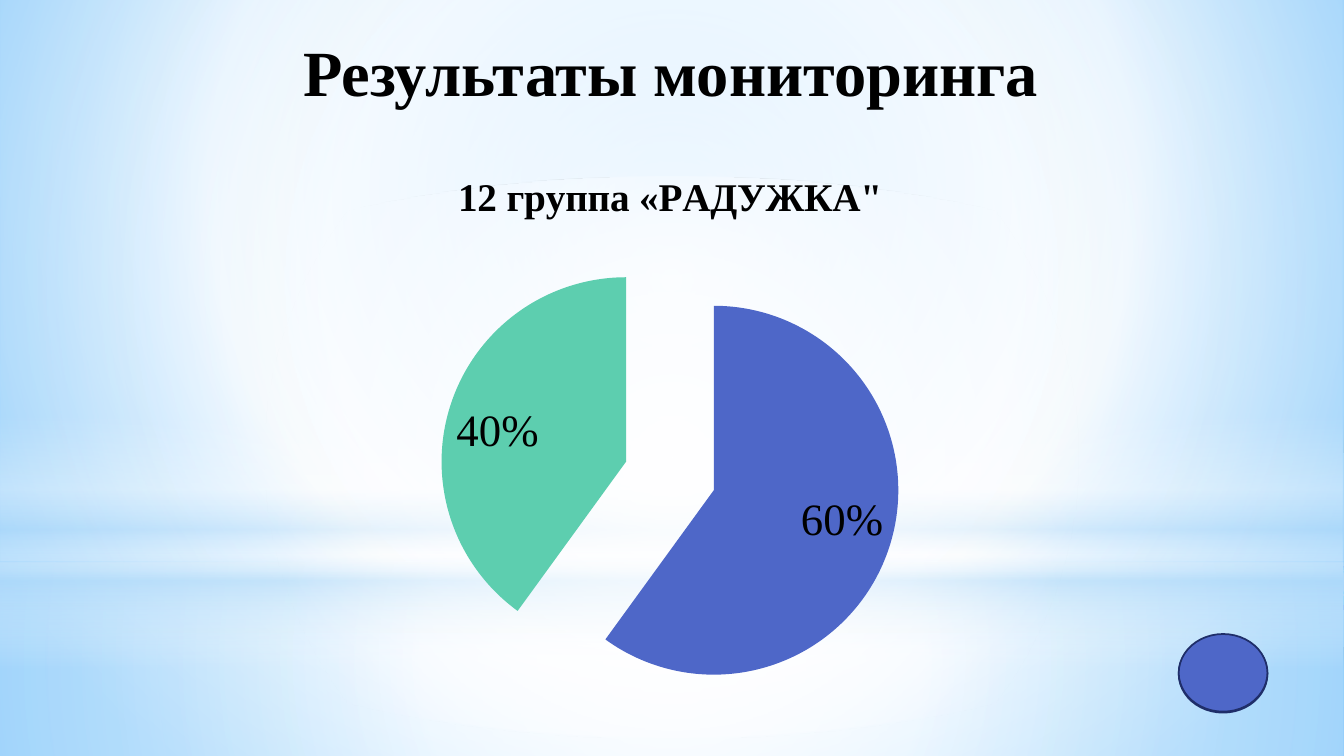
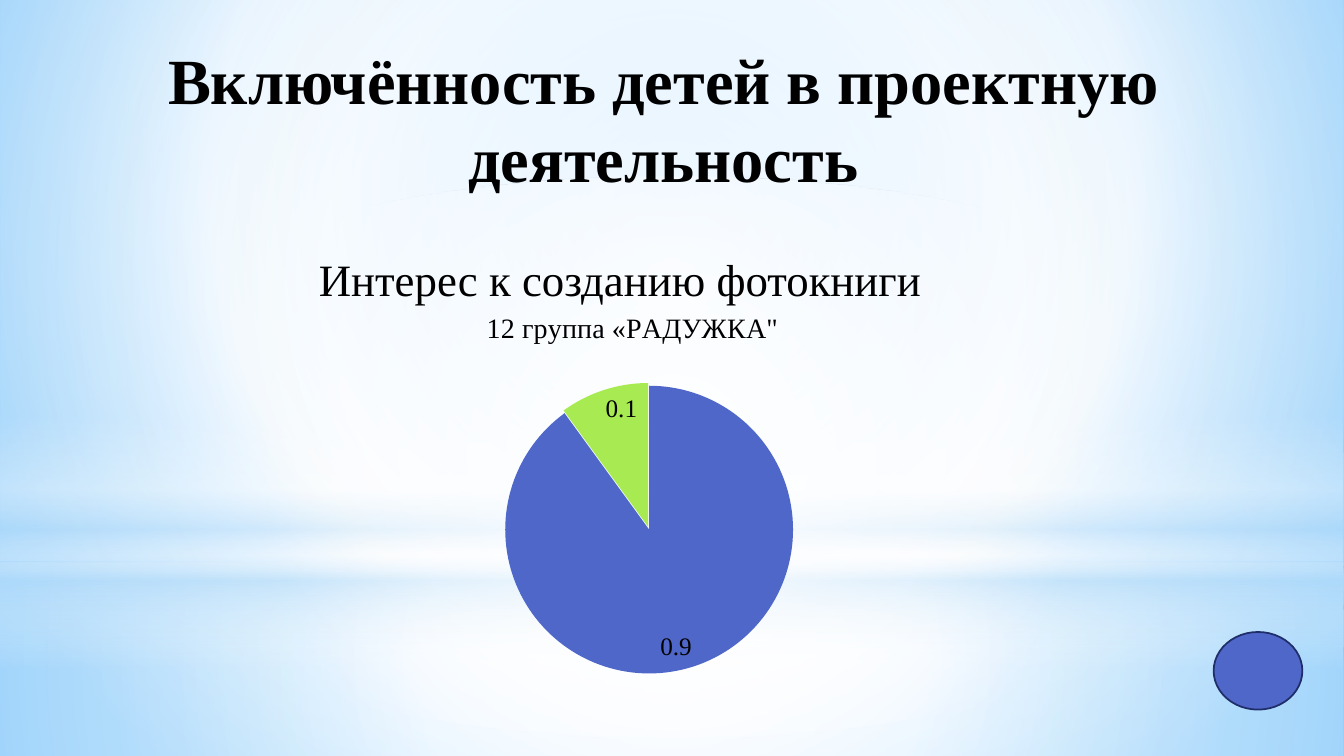
from dataclasses import dataclass

from lxml import etree
from pptx import Presentation
from pptx.chart.data import CategoryChartData
from pptx.dml.color import RGBColor as RGB
from pptx.enum.chart import XL_CHART_TYPE as Chart, XL_LABEL_POSITION as LabelPos
from pptx.enum.shapes import MSO_SHAPE as Shape
from pptx.enum.text import MSO_ANCHOR as Anchor, PP_ALIGN as Align
from pptx.oxml.ns import qn
from pptx.util import Inches, Pt


@dataclass(frozen=True)
class Theme:
    """Colours, fonts and type sizes of the deck."""
    ink: str = "000000"
    blue: str = "4E67C8"
    navy: str = "1F2E69"
    cyan: str = "5ECCF3"
    lime: str = "A7EA52"
    green: str = "5DCEAF"
    white: str = "FFFFFF"
    haze: str = "B4DCFA"
    sky: str = "9ED5FF"
    deep_sky: str = "5BB9FF"
    serif: str = "Times New Roman"
    sans: str = "Roboto"
    title: int = 46
    large: int = 32
    group: int = 28
    small_group: int = 20
    chart: int = 18
    outline: float = 1.25


@dataclass(frozen=True)
class Box:
    """A rectangle in EMU."""
    x: int
    y: int
    w: int
    h: int

    def inner(self, x, y, w, h):
        """Return an inner box given in percent of this one."""
        return Box(self.x + int(self.w * x / 100), self.y + int(self.h * y / 100),
                   int(self.w * w / 100), int(self.h * h / 100))

    @property
    def at(self):
        """Return left, top, width and height."""
        return self.x, self.y, self.w, self.h


T = Theme()
PAGE = Box(0, 0, Inches(13.33), Inches(7.5))
CENTRE = (50, 50, 50, 50)
GROUP = "12 группа «РАДУЖКА\""
BACKDROP = ((0, T.sky, 100), (60, T.white, 100), (100, T.deep_sky, 100))
BANDS = (
    (Shape.RECTANGLE, (0, 74.4, 100, 25.6), CENTRE,
     ((0, T.white, 91), (37, T.white, 76), (100, T.haze, 79))),
    (Shape.RECTANGLE, (0, 0, 100, 74.4), CENTRE,
     ((0, T.white, 89), (48, T.white, 62), (100, T.haze, 79))),
    (Shape.RECTANGLE, (0, 54.93, 100, 33.33), None,
     ((0, T.white, 0), (29, T.white, 30), (45, T.haze, 40),
      (55, T.white, 26), (65, T.haze, 60), (100, T.white, 0))),
    (Shape.OVAL, (0, 23.33, 100, 74.4), CENTRE,
     ((0, T.white, 100), (56, T.white, 0))),
)


def add(parent, tag, **attrs):
    """Append an XML child and return it."""
    return etree.SubElement(parent, qn(tag), {k: str(v) for k, v in attrs.items()})


def gradient(owner, stops, focus):
    """Swap the owner's first solid fill for a radial or vertical gradient."""
    solid = next(owner.iter(qn("a:solidFill")))
    grad = etree.Element(qn("a:gradFill"), rotWithShape="1")
    stop_list = add(grad, "a:gsLst")
    for pos, color, alpha in stops:
        clr = add(add(stop_list, "a:gs", pos=pos * 1000), "a:srgbClr", val=color)
        if alpha < 100:
            add(clr, "a:alpha", val=alpha * 1000)
    if focus:
        edges = {k: v * 1000 for k, v in zip("ltrb", focus)}
        add(add(grad, "a:path", path="circle"), "a:fillToRect", **edges)
    else:
        add(grad, "a:lin", ang=90 * 60000, scaled=0)
    solid.getparent().replace(solid, grad)


def style_font(font, size, name=T.serif, bold=False):
    """Set face, size, weight and ink colour."""
    font.name, font.size, font.bold = name, Pt(size), bold
    font.color.rgb = RGB.from_string(T.ink)


def add_plain(s, kind, box, color):
    """Add a preset shape with a solid fill, no shadow and no line."""
    sp = s.shapes.add_shape(kind, *box.at)
    sp.shadow.inherit = False
    sp.fill.solid()
    sp.fill.fore_color.rgb = RGB.from_string(color)
    sp.line.fill.background()
    return sp


def dress_master(prs, s, box):
    """Give the master its backdrop and light bands."""
    master = prs.slide_master
    master.background.fill.solid()
    master.background.fill.fore_color.rgb = RGB.from_string(T.white)
    gradient(master.element, BACKDROP, (20, 10, 20, 60))
    for i, (kind, place, focus, stops) in enumerate(BANDS):
        sp = add_plain(s, kind, box.inner(*place), T.white)
        gradient(sp.element, stops, focus)
        next(sp.element.iter(qn("p:cNvPr"))).set("id", str(100 + i))
        master.shapes.element.insert(2 + i, sp.element)


def write(tf, text, size, bold=False):
    """Write one centred run at the top of a text frame."""
    tf.word_wrap, tf.vertical_anchor = True, Anchor.TOP
    p = tf.paragraphs[0]
    p.alignment = Align.CENTER
    r = p.add_run()
    r.text = text
    style_font(r.font, size, bold=bold)


def add_title(s, box, text):
    """Place and fill the title placeholder."""
    sp = s.shapes.title
    sp.left, sp.top, sp.width, sp.height = box.at
    write(sp.text_frame, text, T.title, True)
    sp.text_frame.margin_top = Inches(0.1)


def add_heading(s, box, text):
    """Add the line above a chart."""
    write(s.shapes.add_textbox(*box.at).text_frame, text, T.large)


def add_button(s, box):
    """Add a round button."""
    sp = add_plain(s, Shape.OVAL, box, T.blue)
    sp.line.color.rgb = RGB.from_string(T.navy)
    sp.line.width = Pt(T.outline)


def explode(ser, offsets):
    """Pull the slices out, with own offsets for some of them."""
    points = ser.findall(qn("c:dPt"))
    points[0].addprevious(etree.Element(qn("c:explosion"), val="25"))
    for i, offset in offsets.items():
        mark = etree.Element(qn("c:explosion"), val=str(offset))
        points[i].find(qn("c:spPr")).addprevious(mark)


def place_plot(chart, shares):
    """Fix the inner plot area in shares of the chart."""
    area = next(chart.element.iter(qn("c:plotArea")))
    for old in area.findall(qn("c:layout")):
        area.remove(old)
    layout = etree.Element(qn("c:layout"))
    manual = add(layout, "c:manualLayout")
    add(manual, "c:layoutTarget", val="inner")
    for key in "xy":
        add(manual, f"c:{key}Mode", val="edge")
    for key, share in zip("xywh", shares):
        add(manual, f"c:{key}", val=share)
    area.insert(0, layout)


def add_pie(s, box, values, title_size, label_size, bold=False, percent=False,
            offsets=None, plot_at=None):
    """Add an exploded pie with its title and labels."""
    data = CategoryChartData()
    data.categories = [str(i + 1) for i in range(len(values))]
    data.add_series("Series 1", values)
    chart = s.shapes.add_chart(Chart.PIE, *box.at, data).chart
    style_font(chart.font, T.chart, T.sans)
    chart.has_legend = False
    chart.has_title = True
    r = chart.chart_title.text_frame.paragraphs[0].add_run()
    r.text = GROUP
    style_font(r.font, title_size, bold=bold)
    plot = chart.plots[0]
    plot.vary_by_categories = True
    for i, color in zip(range(len(values)), (T.blue, T.cyan, T.lime, T.green)):
        fmt = plot.series[0].points[i].format
        fmt.fill.solid()
        fmt.fill.fore_color.rgb = RGB.from_string(color)
        fmt.line.fill.background()
    plot.has_data_labels = True
    labels = plot.data_labels
    labels.show_percentage, labels.show_value = percent, not percent
    labels.number_format = "0%" if percent else "General"
    labels.number_format_is_linked = False
    labels.position = LabelPos.INSIDE_END
    style_font(labels.font, label_size)
    explode(next(chart.element.iter(qn("c:ser"))), offsets or {})
    if plot_at:
        place_plot(chart, plot_at)


def results_slide(s, box):
    """Fill the slide with the monitoring results."""
    add_title(s, box.inner(4.88, 2.93, 90, 16.67), "Результаты мониторинга")
    add_pie(s, box.inner(3.8, 19.6, 92.1, 75.7), (60, None, None, 40),
            T.group, T.large, bold=True, percent=True)
    for top in (84, 83.87):
        add_button(s, box.inner(87.7, top, 6.6, 10.27))


def interest_slide(s, box):
    """Fill the slide on the children's interest."""
    add_title(s, box.inner(4.35, 4, 90, 16.67),
              "Включённость детей в проектную деятельность")
    add_heading(s, box.inner(11.15, 32.67, 70, 8), "Интерес к созданию фотокниги")
    add_button(s, box.inner(90.3, 83.6, 6.6, 10.27))
    add_pie(s, box.inner(22.35, 38.53, 49.44, 55.33), (0.9, None, 0.1),
            T.small_group, T.chart, offsets={0: 0, 2: 2},
            plot_at=(0.24, 0.14, 0.57, 0.86))


def main():
    """Build and save the deck."""
    prs = Presentation()
    prs.slide_width, prs.slide_height = PAGE.w, PAGE.h
    layout = prs.slide_layouts[5]
    slides = [prs.slides.add_slide(layout) for _ in range(2)]
    dress_master(prs, slides[0], PAGE)
    for fill, s in zip((results_slide, interest_slide), slides):
        fill(s, PAGE)
    prs.save("out.pptx")


if __name__ == "__main__":
    main()
